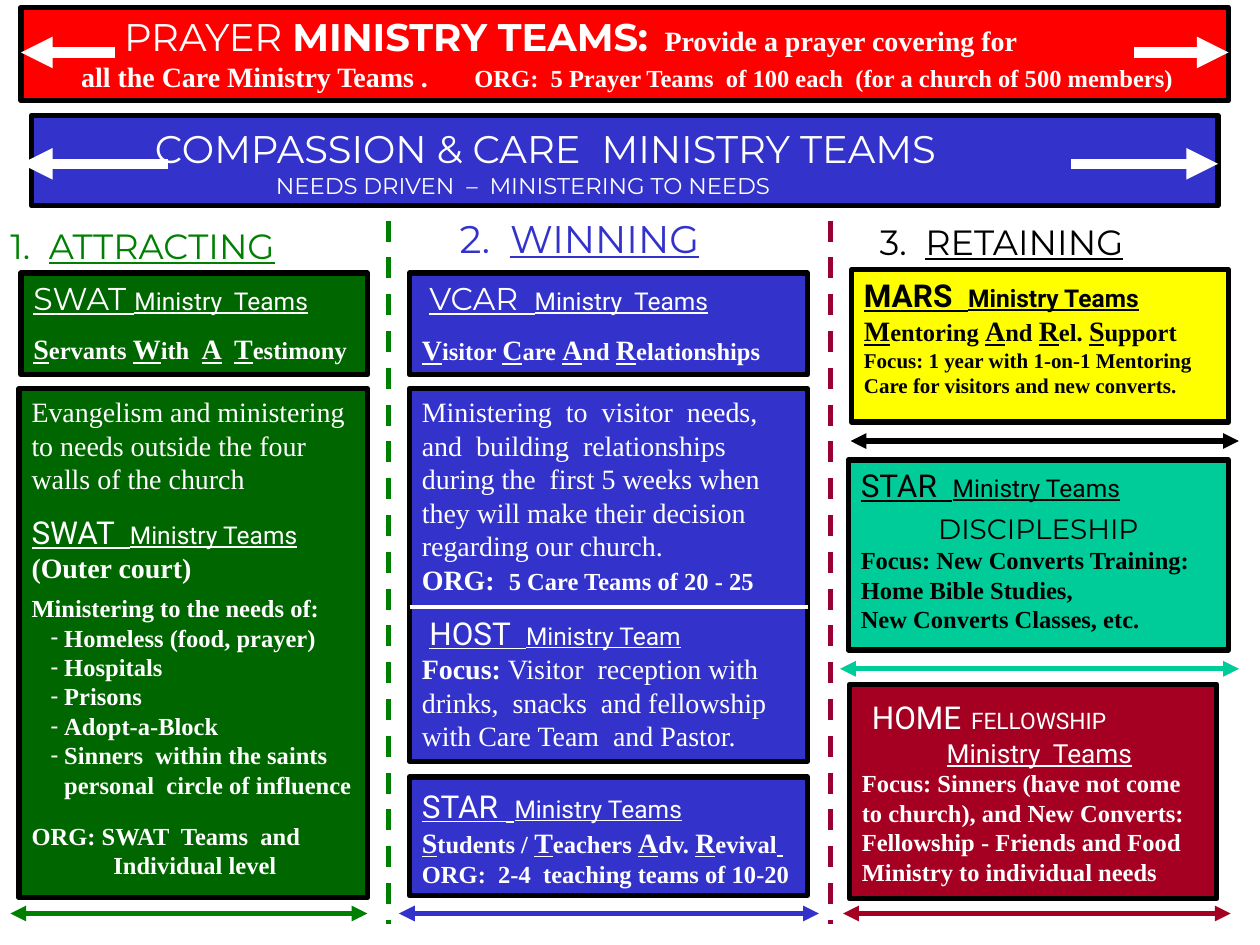
from pptx import Presentation
from pptx import util as u
from pptx.dml.color import RGBColor
from pptx.enum import dml, shapes, text
from pptx.oxml.ns import qn
from lxml import etree

SANS, ROBOTO, SERIF = "Montserrat", "Roboto", "Times New Roman"
WHITE, BLACK, BLUE, GREEN = "FFFFFF", "000000", "3333CC", "006600"
LEFT, CENTER = text.PP_ALIGN.LEFT, text.PP_ALIGN.CENTER

deck = Presentation()
deck.slide_width, deck.slide_height = u.Inches(10), u.Inches(7.5)
cell = deck.slide_width / 120
page = deck.slides.add_slide(deck.slide_layouts[1])


def color(target, value):
    target.rgb = RGBColor.from_string(value)


def write(box, ink, paragraphs):
    frame = box.text_frame
    frame.word_wrap = True
    frame.auto_size = text.MSO_AUTO_SIZE.NONE
    frame.vertical_anchor = text.MSO_ANCHOR.TOP
    for number, (before, indent, align, runs) in enumerate(paragraphs):
        para = frame.add_paragraph() if number else frame.paragraphs[0]
        para.alignment = align
        para.space_before = u.Pt(before)
        listed = indent == "list"
        margin, first = (0.26, -0.11) if listed else (0, indent)
        props = para._p.get_or_add_pPr()
        props.set("marL", str(u.Inches(margin)))
        props.set("indent", str(u.Inches(first)))
        if listed:
            etree.SubElement(props, qn("a:buChar"), char="-")
        else:
            etree.SubElement(props, qn("a:buNone"))
        pieces = []
        for words, size, font, style in runs:
            if style != "acronym":
                pieces.append((words, size, font, style))
                continue
            for place, word in enumerate(words.split(" ")):
                if place:
                    pieces.append((" ", 14, font, "b"))
                if word[:1].isalpha():
                    pieces.append((word[0], 16, font, "bu"))
                    word = word[1:]
                if word:
                    pieces.append((word, 14, font, "b"))
        for words, size, font, style in pieces:
            if "\t" in words:
                stops = etree.SubElement(props, qn("a:tabLst"))
                etree.SubElement(stops, qn("a:tab"), pos=str(u.Inches(3.36)), algn="l")
            span = para.add_run()
            span.text = words
            span.font.size = u.Pt(size)
            span.font.name = font
            span.font.bold = "b" in style
            span.font.underline = "u" in style
            color(span.font.color, ink)


headings = [
    (-0.2, 20.8, 20, "008000", "1.  ", "ATTRACTING"),
    (42.6, 19.9, 22, BLUE, "2.  ", "WINNING"),
    (82.6, 20.4, 20, BLACK, "3.  ", "RETAINING"),
]
for column, row, size, ink, number, name in headings:
    box = page.shapes.add_textbox(*(int(n * cell) for n in (column, row, 32, 6)))
    write(box, ink, [(0, 0, LEFT, [(number, size, SANS, ""), (name, size, SANS, "u")])])

needs = ["Homeless (food, prayer)", "Hospitals", "Prisons", "Adopt-a-Block",
         "Sinners  within the saints personal  circle of influence"]
title, body = page.shapes.title, page.placeholders[1]

panels = [
    (None, (2, 0.7, 115, 8.9), "FF0000", WHITE, [
        (0, 0.72, LEFT, [("PRAYER ", 22, SANS, ""), ("MINISTRY TEAMS:", 22, SANS, "b"),
                         ("  ", 18, SANS, ""), ("Provide a prayer covering for", 16, SERIF, "b")]),
        (0, 0.38, LEFT, [("all the Care Ministry Teams .\t", 16, SERIF, "b"),
                         ("ORG:  5 Prayer Teams  of 100 each  (for a church of 500 members)", 14, SERIF, "b")]),
    ]),
    (title, (3, 11, 113, 8.6), BLUE, WHITE, [
        (0, 0.88, LEFT, [("COMPASSION & CARE ", 22, SANS, ""), (" ", 24, SANS, ""),
                         ("MINISTRY TEAMS", 22, SANS, "")]),
        (0, 1.84, LEFT, [("NEEDS DRIVEN  –  MINISTERING TO NEEDS", 13, SANS, "")]),
    ]),
    (None, (2, 26, 33, 9.7), GREEN, WHITE, [
        (0, 0, LEFT, [("SWAT ", 18, SANS, "u"), ("Ministry  Teams", 14, ROBOTO, "u")]),
        (8.5, 0, LEFT, [("Servants With  A  Testimony", 14, SERIF, "acronym")]),
    ]),
    (body, (1.8, 37, 33.2, 48.5), GREEN, WHITE, [
        (0, 0, LEFT, [("Evangelism and ministering to needs outside the four walls of the church", 16, SERIF, "")]),
        (10, 0, LEFT, [("SWAT  ", 18, ROBOTO, "u"), ("Ministry Teams", 14, ROBOTO, "u")]),
        (0, 0, LEFT, [("(Outer court)", 16, SERIF, "b")]),
        (5, 0, LEFT, [("Ministering to the needs of:", 14, SERIF, "b")]),
        *[(0, "list", LEFT, [(need, 14, SERIF, "b")]) for need in needs],
        (12.5, 0, LEFT, [("ORG: SWAT  Teams  and", 14, SERIF, "b")]),
        (0, 0.65, LEFT, [("Individual level", 14, SERIF, "b")]),
    ]),
    (None, (39, 26, 37.9, 9.7), BLUE, WHITE, [
        (0, 0.06, LEFT, [("VCAR  ", 18, SANS, "u"), ("Ministry  Teams", 14, ROBOTO, "u")]),
        (9, 0, LEFT, [("Visitor Care And Relationships", 14, SERIF, "acronym")]),
    ]),
    (None, (39, 37, 37.9, 35.5), BLUE, WHITE, [
        (0, 0, LEFT, [("Ministering  to  visitor  needs, and  building  relationships during the  first "
                       "5 weeks when they will make their decision regarding our church.", 16, SERIF, "")]),
        (0, 0, LEFT, [("ORG:  ", 16, SERIF, "b"), ("5 Care Teams of 20 - 25", 14, SERIF, "b")]),
        (10, 0.06, LEFT, [("HOST  ", 18, ROBOTO, "u"), ("Ministry Team", 14, ROBOTO, "u")]),
        (0, 0, LEFT, [("Focus: ", 16, SERIF, "b"),
                      ("Visitor  reception with drinks,  snacks  and fellowship with Care Team  and Pastor.",
                       16, SERIF, "")]),
    ]),
    (None, (39, 74, 37.9, 11.3), BLUE, WHITE, [
        (0, 0, LEFT, [("STAR ", 18, ROBOTO, "u"), (" ", 20, ROBOTO, "u"), ("Ministry Teams", 14, ROBOTO, "u")]),
        (0, 0, LEFT, [("Students / Teachers Adv. Revival", 14, SERIF, "acronym"), (" ", 14, SERIF, "bu")]),
        (0, 0, LEFT, [("ORG:  2-4  teaching teams of 10-20", 14, SERIF, "b")]),
    ]),
    (None, (81.1, 25.7, 35.9, 14.5), "FFFF00", BLACK, [
        (0, 0, LEFT, [("MARS  ", 18, ROBOTO, "bu"), ("Ministry Teams", 14, ROBOTO, "bu")]),
        (0, 0, LEFT, [("Mentoring And Rel. Support", 14, SERIF, "acronym")]),
        (0, 0, LEFT, [("Focus: 1 year with 1-on-1 Mentoring Care for visitors and new converts.", 12, SERIF, "b")]),
    ]),
    (None, (80.8, 43.8, 36.2, 18.1), "00CC99", BLACK, [
        (0, 0, LEFT, [("STAR  ", 18, ROBOTO, "u"), ("Ministry Teams", 14, ROBOTO, "u")]),
        (4.5, 0, CENTER, [("DISCIPLESHIP", 16, SANS, "")]),
        (0, 0, LEFT, [("Focus: New Converts Training: Home Bible Studies,", 14, SERIF, "b")]),
        (0, 0, LEFT, [("New Converts Classes, etc.", 14, SERIF, "b")]),
    ]),
    (None, (80.9, 65.2, 35, 20.4), "A50021", WHITE, [
        (0, 0.08, LEFT, [("HOME", 18, ROBOTO, ""), (" ", 22, SERIF, "b"), ("FELLOWSHIP", 13, ROBOTO, "")]),
        (0, 0.1, CENTER, [("Ministry  Teams", 15, ROBOTO, "u")]),
        (0, 0, LEFT, [("Focus: Sinners (have not come to church), and New Converts: "
                       "Fellowship - Friends and Food", 14, SERIF, "b")]),
        (0, 0, LEFT, [("Ministry to individual needs", 14, SERIF, "b")]),
    ]),
]
for holder, area, fill, ink, paragraphs in panels:
    left, top, width, height = (int(n * cell) for n in area)
    box = holder
    if box is None:
        box = page.shapes.add_shape(shapes.MSO_SHAPE.RECTANGLE, left, top, width, height)
        box.shadow.inherit = False
    box.left, box.top, box.width, box.height = left, top, width, height
    box.fill.solid()
    color(box.fill.fore_color, fill)
    color(box.line.color, BLACK)
    box.line.width = u.Pt(3)
    write(box, ink, paragraphs)

both, end = ("headEnd", "tailEnd"), ("tailEnd",)
lines = [
    ((78, 87, 38, 87), BLUE, 3, both),
    ((1, 87, 35, 87), "008000", 3, both),
    ((80.3, 87, 117.2, 87), "A50021", 3, both),
    ((81, 42, 118, 42), BLACK, 3, both),
    ((80, 63.7, 118, 63.7), "00CC99", 3, both),
    ((11, 5, 2, 5), WHITE, 6, end),
    ((108, 5, 117, 5), WHITE, 6, end),
    ((16, 15.6, 2, 15.6), WHITE, 6, end),
    ((102, 15.6, 116, 15.6), WHITE, 6, end),
    ((37, 21, 37, 88), "008000", 3, "dash"),
    ((79.1, 21, 79.1, 88), "990033", 3, "dash"),
    ((39, 57.8, 77, 57.8), WHITE, 2.25, ()),
]
for points, ink, weight, ends in lines:
    line = page.shapes.add_connector(shapes.MSO_CONNECTOR.STRAIGHT, *(int(n * cell) for n in points))
    color(line.line.color, ink)
    line.line.width = u.Pt(weight)
    props = line.element.spPr
    if ends == "dash":
        line.line.dash_style = dml.MSO_LINE.DASH
    else:
        for tag in ends:
            etree.SubElement(props.find(qn("a:ln")), qn("a:" + tag), type="triangle")
    etree.SubElement(props, qn("a:effectLst"))

deck.save("out.pptx")
